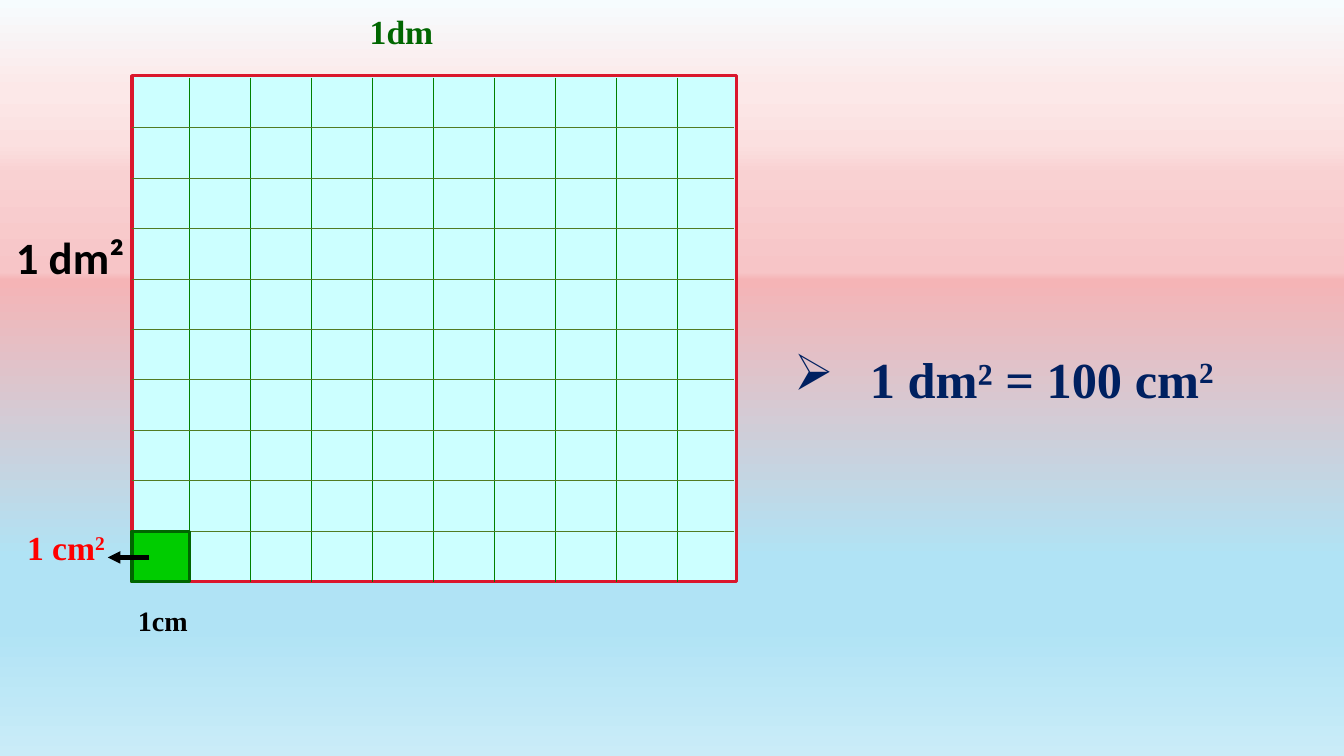
from lxml import etree
from pptx import Presentation
from pptx.dml.color import RGBColor
from pptx.enum.shapes import MSO_CONNECTOR, MSO_SHAPE
from pptx.enum.text import MSO_AUTO_SIZE
from pptx.oxml.ns import qn
from pptx.util import Pt

STRAIGHT = MSO_CONNECTOR.STRAIGHT
RECTANGLE = MSO_SHAPE.RECTANGLE
FIT_SHAPE = MSO_AUTO_SIZE.SHAPE_TO_FIT_TEXT

BLACK = RGBColor(0x00, 0x00, 0x00)
RED = RGBColor(0xFF, 0x00, 0x00)
NAVY = RGBColor(0x00, 0x20, 0x60)
DARK_GREEN = RGBColor(0x00, 0x66, 0x00)
COLUMN_GREEN = RGBColor(0x00, 0x80, 0x00)
ROW_GREEN = RGBColor(0x51, 0x7B, 0x23)
CELL_GREEN = RGBColor(0x00, 0xCC, 0x00)
PALE_CYAN = RGBColor(0xCC, 0xFF, 0xFF)
CRIMSON = RGBColor(0xDA, 0x17, 0x2C)
SKY_STOPS = [
    (0, RGBColor(0xF6, 0xFC, 0xFE)), (12, RGBColor(0xFC, 0xE8, 0xE8)),
    (19, RGBColor(0xFB, 0xE0, 0xE0)), (23, RGBColor(0xF9, 0xD1, 0xD2)),
    (36, RGBColor(0xF7, 0xC5, 0xC7)), (37, RGBColor(0xF5, 0xB4, 0xB6)),
    (74, RGBColor(0xB0, 0xE3, 0xF5)), (83, RGBColor(0xB0, 0xE3, 0xF5)),
    (100, RGBColor(0xCA, 0xEC, 0xF8)),
]

deck = Presentation()
deck.slide_width, deck.slide_height = Pt(960), Pt(540)
page = deck.slides.add_slide(deck.slide_layouts[6])


def add_line(x1, y1, x2, y2, color, width):
    line = page.shapes.add_connector(STRAIGHT, Pt(x1), Pt(y1), Pt(x2), Pt(y2))
    line.line.color.rgb = color
    line.line.width = Pt(width)
    etree.SubElement(line._element.spPr, qn("a:effectLst"))
    return line


# Background gradient, running from top to bottom
sky = page.background.fill
sky.gradient()
sky.gradient_angle = 270
stop_list = page.element.find(".//" + qn("a:gsLst"))
for stop in list(stop_list):
    stop_list.remove(stop)
for percent, color in SKY_STOPS:
    stop = etree.SubElement(stop_list, qn("a:gs"), pos=str(percent * 1000))
    etree.SubElement(stop, qn("a:srgbClr"), val=str(color))

# Square decimetre, its grid, and one square centimetre
squares = [
    (94.32, 54, 432, 361.44, PALE_CYAN, CRIMSON),
    (94.32, 379.44, 41.04, 36, CELL_GREEN, DARK_GREEN),
]
for left, top, width, height, fill, outline in squares:
    square = page.shapes.add_shape(RECTANGLE, Pt(left), Pt(top), Pt(width), Pt(height))
    square.shadow.inherit = False
    square.fill.solid()
    square.fill.fore_color.rgb = fill
    square.line.color.rgb = outline
    square.line.width = Pt(2.25)
    if fill == PALE_CYAN:
        for step in range(9):
            x = 135.36 + 43.56 * step
            add_line(x, 55.44, x, 415.44, COLUMN_GREEN, 0.75)
        for step in range(9):
            y = 91.44 + 36 * step
            add_line(94.32, y, 524.16, y, ROW_GREEN, 0.75)

arrow = add_line(106.56, 398.16, 77.04, 398.16, BLACK, 3)
etree.SubElement(arrow.line._get_or_add_ln(), qn("a:tailEnd"), type="triangle")

# Labels: left, top, width, height, wrap, text, superscript, font, size, color
SERIF = "Times New Roman"
labels = [
    (12.24, 372.96, 72, 36, False, "1 cm", "2", SERIF, 24, RED),
    (257.04, 4.32, 60.48, 36, False, "1dm", "", SERIF, 24, DARK_GREEN),
    (91.44, 427.68, 66.24, 31.68, True, "1cm", "", SERIF, 20, BLACK),
    (4.32, 160.56, 118.8, 46.08, True, "1 dm²", "", "Calibri", 32, BLACK),
    (567.36, 248.4, 378.72, 43.92, True, "1 dm² = 100 cm", "2", SERIF, 36, NAVY),
]
for left, top, width, height, wrap, text, power, font, size, color in labels:
    box = page.shapes.add_textbox(Pt(left), Pt(top), Pt(width), Pt(height))
    frame = box.text_frame
    frame.word_wrap = wrap
    frame.auto_size = FIT_SHAPE
    para = frame.paragraphs[0]
    para.text = text
    if power:
        span = para.add_run()
        span.text = power
        span._r.get_or_add_rPr().set("baseline", "30000")
    for span in para.runs:
        span.font.name = font
        span.font.size = Pt(size)
        span.font.bold = True
        span.font.color.rgb = color

# The equation is the last label: a bulleted line without margins
frame.margin_left = frame.margin_top = frame.margin_right = frame.margin_bottom = 0
properties = para._p.get_or_add_pPr()
properties.set("marL", str(Pt(54)))
properties.set("indent", str(-Pt(54)))
etree.SubElement(properties, qn("a:buFont"), typeface="Wingdings")
etree.SubElement(properties, qn("a:buChar"), char="Ø")

deck.save("out.pptx")
